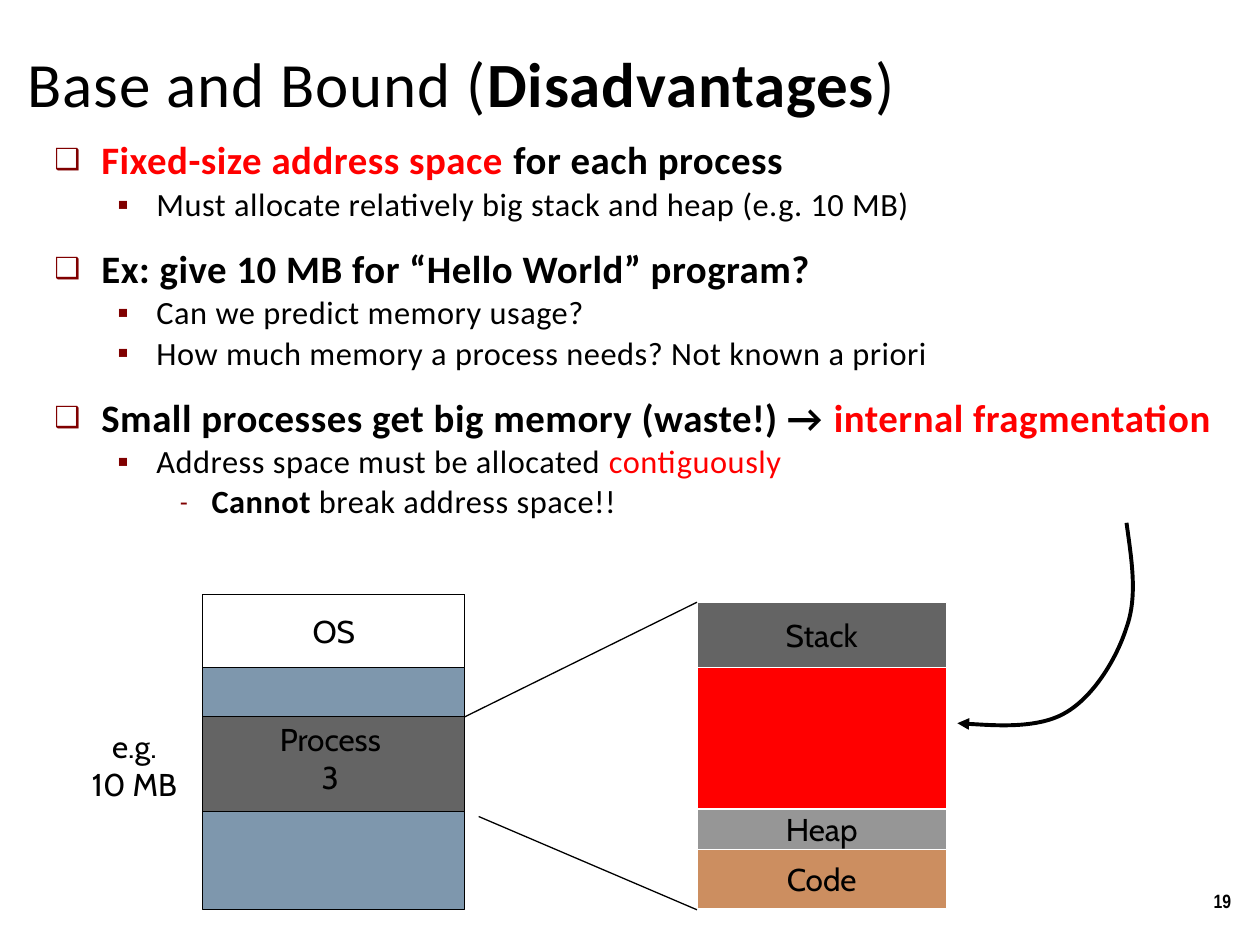
import dataclasses

import pptx
import pptx.dml.color
import pptx.enum.shapes
import pptx.enum.text
import pptx.oxml.ns
import pptx.util
from lxml import etree

Cm = pptx.util.Cm
Pt = pptx.util.Pt
qn = pptx.oxml.ns.qn
ALIGN = pptx.enum.text.PP_ALIGN
ANCHOR = pptx.enum.text.MSO_ANCHOR


@dataclasses.dataclass
class Theme:
    black: str = "000000"
    white: str = "FFFFFF"
    red: str = "FF0000"
    bullet: str = "800000"
    memory: str = "7E97AD"
    dark_gray: str = "646464"
    light_gray: str = "969696"
    code: str = "CC8E60"
    text_font: str = "Calibri"
    diagram_font: str = "Cabin"
    number_font: str = "Arial Narrow"
    title_size: float = 36
    point_size: float = 22.2
    detail_size: float = 18.5
    label_size: float = 18
    number_size: float = 11


theme = Theme()


def style_run(run, size, font, color=theme.black, bold=False, spacing=0):
    run.font.size = Pt(size)
    run.font.name = font
    run.font.bold = bold
    run.font.color.rgb = pptx.dml.color.RGBColor.from_string(color)
    if spacing:
        run.font._element.set("spc", str(spacing))


def add_block(left, top, width, height, text="", fill=None, line=None, anchor=ANCHOR.MIDDLE,
              align=ALIGN.CENTER, size=theme.label_size, font=theme.diagram_font, bold=False):
    """A filled rectangle, or a plain text box when no fill is given."""
    place = Cm(left), Cm(top), Cm(width), Cm(height)
    if fill:
        block = slide.shapes.add_shape(pptx.enum.shapes.MSO_SHAPE.RECTANGLE, *place)
        block.shadow.inherit = False
        block.fill.solid()
        block.fill.fore_color.rgb = pptx.dml.color.RGBColor.from_string(fill)
        block.line.color.rgb = pptx.dml.color.RGBColor.from_string(line)
        block.line.width = Pt(0.75)
    else:
        block = slide.shapes.add_textbox(*place)
    if text:
        frame = block.text_frame
        frame.text = text
        frame.word_wrap = fill is None
        frame.vertical_anchor = anchor
        for paragraph in frame.paragraphs:
            paragraph.alignment = align
            for run in paragraph.runs:
                style_run(run, size, font, bold=bold)


presentation = pptx.Presentation()
presentation.slide_width, presentation.slide_height = Cm(25.4), Cm(19.05)
slide = presentation.slides.add_slide(presentation.slide_layouts[1])

# Title
title = slide.shapes.title
title.left, title.top, title.width, title.height = Cm(0.3), Cm(0), Cm(24.16), Cm(2.54)
title.text_frame.vertical_anchor = ANCHOR.BOTTOM
title.text_frame.auto_size = pptx.enum.text.MSO_AUTO_SIZE.NONE
heading = title.text_frame.paragraphs[0]
heading.alignment = ALIGN.LEFT
for text, bold in [("Base and Bound (", False), ("Disadvantages", True), (")", False)]:
    run = heading.add_run()
    run.text = text
    style_run(run, theme.title_size, theme.text_font, bold=bold, spacing=50)

# Bullet list: level, then runs of text, colour and weight
points = [
    (0, [("Fixed-size address space ", theme.red, True), ("for each process", theme.black, True)]),
    (1, [("Must allocate relatively big stack and heap (e.g. 10 MB)", theme.black, False)]),
    (0, [("Ex: give 10 MB for “Hello World” program?", theme.black, True)]),
    (1, [("Can we predict memory usage?", theme.black, False)]),
    (1, [("How much memory a process needs? Not known a priori", theme.black, False)]),
    (0, [("Small processes get big memory (waste!) → ", theme.black, True),
         ("internal fragmentation", theme.red, True)]),
    (1, [("Address space must be allocated ", theme.black, False),
         ("contiguously", theme.red, False)]),
    (2, [("Cannot", theme.black, True), (" break address space!!", theme.black, False)]),
]
# Per level: text size, space before, left margin, hanging indent, bullet, bullet percent
levels = [
    (theme.point_size, 15, 0.95, 0.95, "❑", 75),
    (theme.detail_size, 3, 2.06, 0.79, "▪", 100),
    (theme.detail_size, 3, 3.17, 0.64, "-", 75),
]
body = slide.placeholders[1]
body.left, body.top, body.width, body.height = Cm(0.84), Cm(2.72), Cm(24.23), Cm(8.51)
body.text_frame.auto_size = pptx.enum.text.MSO_AUTO_SIZE.NONE
for index, (level, parts) in enumerate(points):
    size, before, margin, hanging, bullet, percent = levels[level]
    point = body.text_frame.paragraphs[0] if index == 0 else body.text_frame.add_paragraph()
    point.level = level
    point.line_spacing = 0.9
    point.space_before = Pt(before)
    properties = point._p.get_or_add_pPr()
    properties.set("marL", str(Cm(margin)))
    properties.set("indent", str(-Cm(hanging)))
    bullet_color = etree.SubElement(properties, qn("a:buClr"))
    etree.SubElement(bullet_color, qn("a:srgbClr"), val=theme.bullet)
    etree.SubElement(properties, qn("a:buSzPct"), val=str(percent * 1000))
    etree.SubElement(properties, qn("a:buChar"), char=bullet)
    for text, color, bold in parts:
        run = point.add_run()
        run.text = text
        style_run(run, size, theme.text_font, color, bold, spacing=30)

# Slide number
add_block(22.33, 17.65, 2.74, 1.02, "19", align=ALIGN.RIGHT,
          size=theme.number_size, font=theme.number_font, bold=True)

# Physical memory
memory_left, memory_top, memory_width = 4.09, 11.99, 5.28
process_top = 14.45
add_block(memory_left, memory_top, memory_width, 6.35, fill=theme.memory, line=theme.black)
add_block(memory_left, memory_top, memory_width, 1.47, "OS", theme.white, theme.black)
add_block(memory_left, process_top, memory_width, 1.91, fill=theme.dark_gray, line=theme.black)
add_block(5.15, 14.4, 3.02, 1.02, "Process\v3", anchor=ANCHOR.TOP)
add_block(1.35, 14.53, 2.72, 1.8, "e.g.\n10 MB", anchor=ANCHOR.TOP)

# Address space of the process, stacked from the top
space_left, space_top, space_width = 14.05, 12.14, 5.03
segment_top = space_top
for name, height, fill in [("Stack", 1.32, theme.dark_gray), ("", 2.85, theme.red),
                           ("Heap", 0.81, theme.light_gray), ("Code", 1.2, theme.code)]:
    add_block(space_left, segment_top, space_width, height, name, fill, theme.white)
    segment_top += height

# Zoom lines from the process to its address space
for start_x, start_y, end_y in [(memory_left + memory_width, process_top, space_top),
                                (9.65, 16.46, 18.34)]:
    zoom = slide.shapes.add_connector(pptx.enum.shapes.MSO_CONNECTOR.STRAIGHT,
                                      Cm(start_x), Cm(start_y), Cm(space_left), Cm(end_y))
    zoom.line.color.rgb = pptx.dml.color.RGBColor.from_string(theme.black)
    zoom.line.width = Pt(0.75)
    etree.SubElement(zoom._element.spPr, qn("a:effectLst"))

# Curved arrow to the wasted memory: every three points make one Bezier segment
curve_points = [(22.81, 11.28), (22.94, 12.01), (22.71, 12.65),
                (22.5, 13.31), (22.02, 14.07), (21.46, 14.38),
                (20.88, 14.71), (19.3, 14.58), (19.3, 14.58)]
builder = slide.shapes.build_freeform(Cm(22.71), Cm(10.54))
builder.add_line_segments([(Cm(x), Cm(y)) for x, y in curve_points], close=False)
arrow = builder.convert_to_shape()
segments = list(arrow._element.iter(qn("a:lnTo")))
for first in range(0, len(segments), 3):
    curve = etree.Element(qn("a:cubicBezTo"))
    segments[first].addprevious(curve)
    for segment in segments[first:first + 3]:
        curve.append(segment[0])
        segment.getparent().remove(segment)
arrow.shadow.inherit = False
arrow.fill.background()
arrow.line.color.rgb = pptx.dml.color.RGBColor.from_string(theme.black)
arrow.line.width = Pt(2.25)
etree.SubElement(arrow.line._get_or_add_ln(), qn("a:tailEnd"), type="triangle")

presentation.save("out.pptx")
